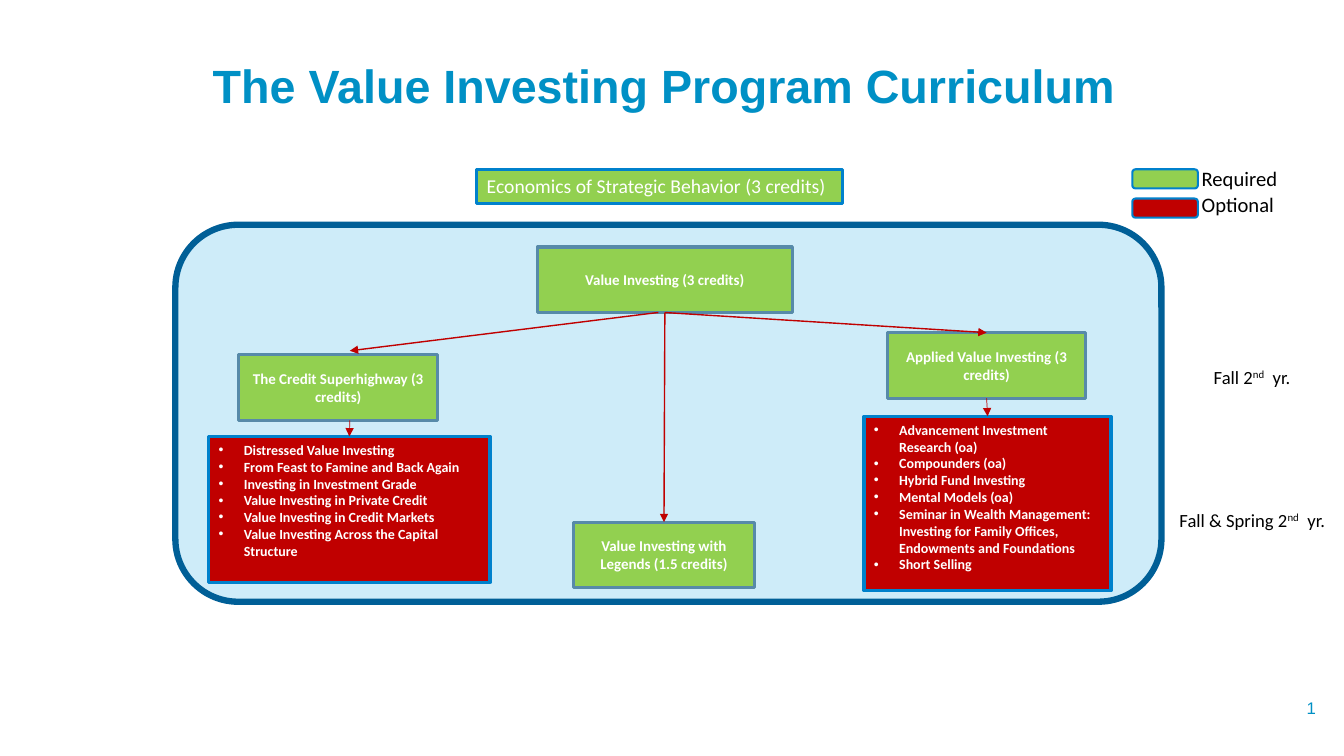
"""Build the Value Investing Program curriculum slide."""
from lxml import etree
from pptx import Presentation
from pptx.dml.color import RGBColor
from pptx.enum.shapes import MSO_CONNECTOR, MSO_SHAPE
from pptx.enum.text import MSO_ANCHOR, PP_ALIGN
from pptx.oxml.ns import qn
from pptx.util import Inches, Pt

RECT, ROUNDED = MSO_SHAPE.RECTANGLE, MSO_SHAPE.ROUNDED_RECTANGLE
STRAIGHT = MSO_CONNECTOR.STRAIGHT
TOP, MIDDLE = MSO_ANCHOR.TOP, MSO_ANCHOR.MIDDLE
LEFT, CENTER, RIGHT = PP_ALIGN.LEFT, PP_ALIGN.CENTER, PP_ALIGN.RIGHT
TOP_SIDE, BOTTOM_SIDE = 0, 2

WIDTH, HEIGHT = Inches(13.33), Inches(7.5)
COLUMN, ROW = WIDTH / 100, HEIGHT / 100

GREEN, RED, WHITE, BLACK = "92D050", "C00000", "FFFFFF", "000000"
TITLE_BLUE, EDGE_BLUE, COURSE_EDGE = "0090C5", "0081CC", "578AA9"
PANEL_FILL, PANEL_EDGE = "CEECF9", "005F97"

TITLE = ("The Value Investing Program Curriculum", (8.33, 8.4, 82.22, 6.67))
PAGE_NUMBER = ("1", (90.55, 90.93, 8.1, 5.33))
PREREQUISITE = ("Economics of Strategic Behavior (3 credits)",
                (35.48, 22.4, 27.23, 4.53))
PANEL_AREA = (13.05, 29.73, 73.37, 49.87)

COURSE_ROWS = 8.67
COURSES = {
    "core": ("Value Investing (3 credits)", 39.98, 32.67, 18.98),
    "applied": ("Applied Value Investing (3 credits)", 66.02, 44, 14.78),
    "legends": ("Value Investing with Legends (1.5 credits)", 42.69, 69.07, 13.43),
    "credit": ("The Credit Superhighway (3 credits)", 17.78, 46.93, 14.78),
}
ELECTIVES = {
    "credit electives": ((15.53, 57.73, 20.93, 19.33), [
        "Distressed Value Investing",
        "From Feast to Famine and Back Again",
        "Investing in Investment Grade",
        "Value Investing in Private Credit",
        "Value Investing in Credit Markets",
        "Value Investing Across the Capital Structure",
    ]),
    "applied electives": ((64.29, 55.07, 18.38, 23.07), [
        "Advancement Investment Research (oa)",
        "Compounders (oa)",
        "Hybrid Fund Investing",
        "Mental Models (oa)",
        "Seminar in Wealth Management: Investing for Family Offices, "
        "Endowments and Foundations",
        "Short Selling",
    ]),
}
ARROWS = [
    ("core", "applied", 1),
    ("core", "legends", 1),
    ((48.99, 41.33), (26.03, 46.4), 1),
    ("applied", "applied electives", 0.5),
    ((26.03, 55.6), "credit electives", 0.5),
]
TERMS = [
    ("Fall 2", (89.57, 47.73, 7.58, 4.4)),
    ("Fall & Spring 2", (87.02, 66.67, 12.68, 4.4)),
]
LEGEND = [("Required", GREEN, 7.2), ("Optional", RED, 7.05)]
SWATCH_AREA, SWATCH_STEP = (84.25, 22.4, 4.88, 2.53), 3.87
LABEL_LEFT, LABEL_TOP, LABEL_ROWS, LABEL_STEP = 88.67, 21.33, 4.67, 3.34


def rgb(value):
    """Return a colour from its hex string."""
    return RGBColor.from_string(value)


def place(area):
    """Turn grid columns and rows into slide lengths."""
    return [round(n * unit) for n, unit in zip(area, (COLUMN, ROW) * 2)]


def add_box(area, fill, edge, weight, outline=RECT):
    """Add a filled, outlined shape."""
    box = slide.shapes.add_shape(outline, *place(area))
    box.shadow.inherit = False
    box.fill.solid()
    box.fill.fore_color.rgb = rgb(fill)
    box.line.color.rgb = rgb(edge)
    box.line.width = Pt(weight)
    return box


def add_run(paragraph, words, size, color, bold=False, font="Calibri"):
    """Add one styled run."""
    run = paragraph.add_run()
    run.text = words
    run.font.size, run.font.bold, run.font.name = Pt(size), bold, font
    run.font.color.rgb = rgb(color)
    return run


def open_text(holder, align=LEFT, anchor=TOP, wrap=True):
    """Set up the text frame and return its first paragraph."""
    frame = holder.text_frame
    frame.word_wrap, frame.vertical_anchor = wrap, anchor
    frame.paragraphs[0].alignment = align
    return frame.paragraphs[0]


def add_label(area, align=LEFT, anchor=TOP, wrap=False):
    """Add a text box and return its first paragraph."""
    return open_text(slide.shapes.add_textbox(*place(area)), align, anchor, wrap)


def add_bullet(paragraph):
    """Give the paragraph a hanging round bullet."""
    props = paragraph._p.get_or_add_pPr()
    props.set("marL", str(Inches(0.25)))
    props.set("indent", str(-Inches(0.25)))
    etree.SubElement(props, qn("a:buFont")).set("typeface", "Arial")
    etree.SubElement(props, qn("a:buChar")).set("char", "•")


def add_arrow(start, end, weight):
    """Draw a red arrow between boxes or grid points."""
    points = [place(p) if isinstance(p, tuple) else (0, 0) for p in (start, end)]
    arrow = slide.shapes.add_connector(STRAIGHT, *points[0], *points[1])
    if start in boxes:
        arrow.begin_connect(boxes[start], BOTTOM_SIDE)
    if end in boxes:
        arrow.end_connect(boxes[end], TOP_SIDE)
    arrow.line.color.rgb = rgb(RED)
    arrow.line.width = Pt(weight)
    etree.SubElement(arrow.line._get_or_add_ln(), qn("a:tailEnd")).set("type", "triangle")
    etree.SubElement(arrow._element.spPr, qn("a:effectLst"))


deck = Presentation()
deck.slide_width, deck.slide_height = WIDTH, HEIGHT
slide = deck.slides.add_slide(deck.slide_layouts[6])

heading, heading_area = TITLE
title = add_label(heading_area, CENTER, MIDDLE, True)
title.line_spacing = 0.9
add_run(title, heading, 33.3, TITLE_BLUE, True, "Arial")
number, number_area = PAGE_NUMBER
add_run(add_label(number_area, RIGHT, MIDDLE, True), number, 12, TITLE_BLUE, font="Arial")

add_box(PANEL_AREA, PANEL_FILL, PANEL_EDGE, 4.5, ROUNDED)
course, course_area = PREREQUISITE
prerequisite = add_box(course_area, GREEN, EDGE_BLUE, 2.25)
add_run(open_text(prerequisite, wrap=False), course, 14, WHITE)

boxes = {}
for key, (course, left, top, columns) in COURSES.items():
    boxes[key] = add_box((left, top, columns, COURSE_ROWS), GREEN, COURSE_EDGE, 2.25)
    add_run(open_text(boxes[key], CENTER, MIDDLE), course, 10.7, WHITE, True)

for key, (area, electives) in ELECTIVES.items():
    boxes[key] = add_box(area, RED, EDGE_BLUE, 2.25)
    paragraph = open_text(boxes[key])
    for index, elective in enumerate(electives):
        if index:
            paragraph = boxes[key].text_frame.add_paragraph()
            paragraph.alignment = LEFT
        add_bullet(paragraph)
        add_run(paragraph, elective, 10, WHITE, True)

for start, end, weight in ARROWS:
    add_arrow(start, end, weight)

for term, area in TERMS:
    paragraph = add_label(area)
    add_run(paragraph, term, 13.3, BLACK)
    ordinal = add_run(paragraph, "nd", 13.3, BLACK)
    ordinal._r.get_or_add_rPr().set("baseline", "30000")
    add_run(paragraph, "  yr.", 13.3, BLACK)

for index, (status, color, columns) in enumerate(LEGEND):
    left, top, swatch_columns, swatch_rows = SWATCH_AREA
    add_box((left, top + index * SWATCH_STEP, swatch_columns, swatch_rows),
            color, EDGE_BLUE, 1.5, ROUNDED)
    label_area = (LABEL_LEFT, LABEL_TOP + index * LABEL_STEP, columns, LABEL_ROWS)
    add_run(add_label(label_area), status, 14.7, BLACK)

deck.save("out.pptx")
